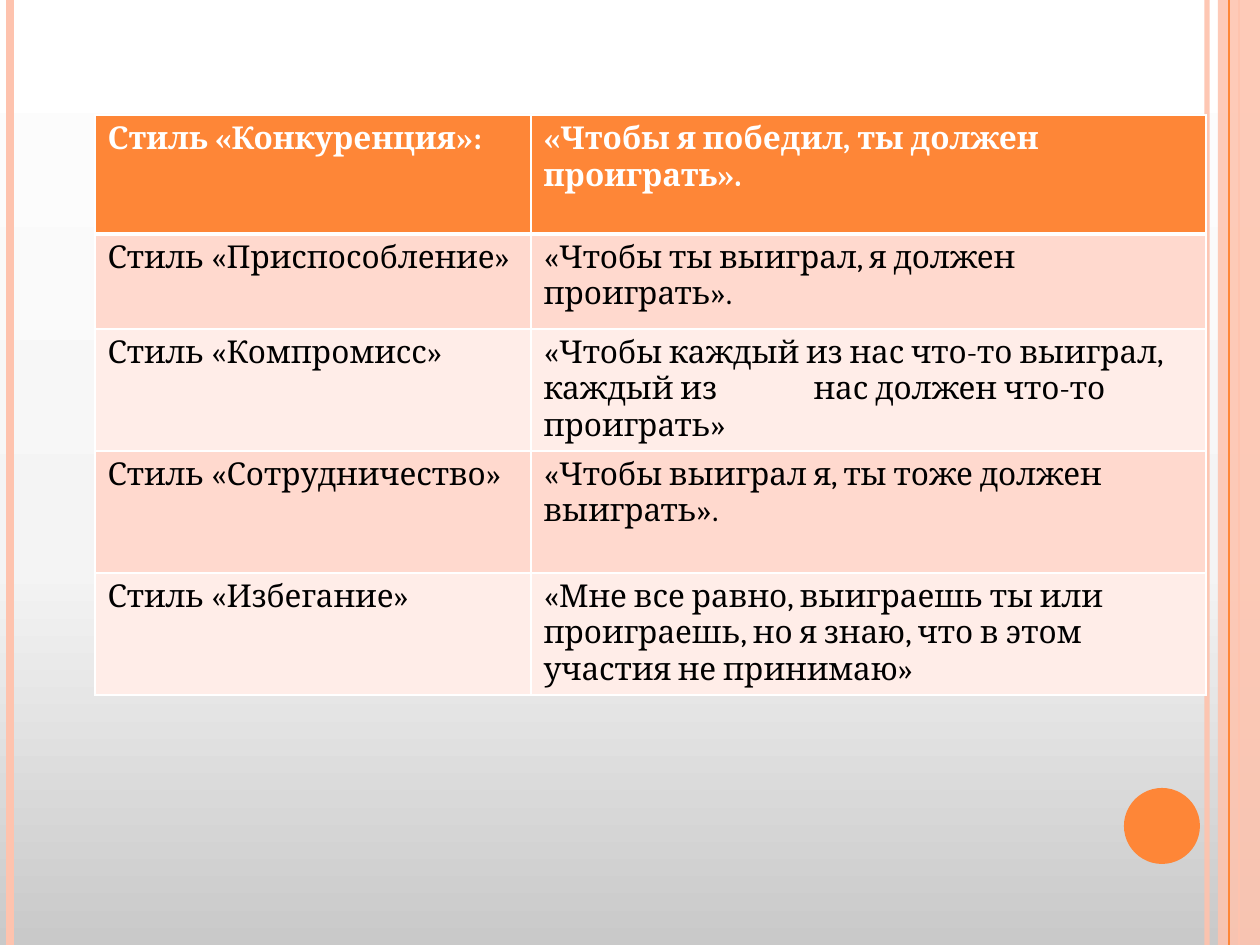
import copy

import pptx
import pptx.dml.color
import pptx.enum.shapes
import pptx.oxml
import pptx.oxml.ns
import pptx.util

PX = 914400 // 126
W, H = 1260, 945
FONT = "Cambria"
HUES = {
    "orange": "FE8637", "peach": "FEC3AE", "white": "FFFFFF", "black": "000000",
    "dark": "FFD9CE", "light": "FFEDE8", "grey": "C9C9C9", "pale": "F4F4F4",
}
NS = pptx.oxml.ns.nsdecls("a")
qn = pptx.oxml.ns.qn


def rgb(name):
    return pptx.dml.color.RGBColor.from_string(HUES[name])


def fade(props, share):
    """Set the opacity, in percent, of the first colour inside props."""
    hue = next(props.iter(qn("a:srgbClr")))
    hue.append(pptx.oxml.parse_xml(f'<a:alpha {NS} val="{share * 1000}"/>'))


deck = pptx.Presentation()
deck.slide_width, deck.slide_height = W * PX, H * PX
slide = deck.slides.add_slide(deck.slide_layouts[6])
shapes = slide.shapes

# Background gradient, from the bottom up
fill = slide.background.fill
fill.gradient()
fill.gradient_angle = 90
first = next(slide.background._cSld.iter(qn("a:gs")))
first.addnext(copy.deepcopy(first))
for stop, (place, hue) in zip(fill.gradient_stops,
                              [(0, "grey"), (0.4, "pale"), (1, "white")]):
    stop.position = place
    stop.color.rgb = rgb(hue)

# Side band, then the vertical stripes: x, colour, points, opacity
band = shapes.add_shape(pptx.enum.shapes.MSO_SHAPE.RECTANGLE,
                        1218 * PX, 0, 42 * PX, H * PX)
band.shadow.inherit = False
band.fill.solid()
band.fill.fore_color.rgb = rgb("peach")
fade(band._element.spPr, 87)
band.line.fill.background()

stripes = [(1207, "peach", 3, 93), (10, "peach", 4.5, 100),
           (1239, "peach", 1.5, 100), (1229, "orange", 0.75, 100)]
for x, hue, size, share in stripes:
    line = shapes.add_connector(pptx.enum.shapes.MSO_CONNECTOR.STRAIGHT,
                                x * PX, 0, x * PX, H * PX)
    line.line.color.rgb = rgb(hue)
    line.line.width = pptx.util.Pt(size)
    props = line._element.spPr
    if share < 100:
        fade(props, share)
    props.append(pptx.oxml.parse_xml(f"<a:effectLst {NS}/>"))

disc = shapes.add_shape(pptx.enum.shapes.MSO_SHAPE.OVAL,
                        1124 * PX, 788 * PX, 76 * PX, 76 * PX)
disc.shadow.inherit = False
disc.fill.solid()
disc.fill.fore_color.rgb = rgb("orange")
disc.line.fill.background()

# Table of conflict styles: height, style, motto
rows = [
    (119, "Стиль «Конкуренция»:", "«Чтобы я победил, ты должен проиграть»."),
    (95, "Стиль «Приспособление»", "«Чтобы ты выиграл, я должен проиграть»."),
    (122, "Стиль «Компромисс»",
     "«Чтобы каждый из нас что-то выиграл, каждый из\tнас должен что-то проиграть»"),
    (122, "Стиль «Сотрудничество»", "«Чтобы выиграл я, ты тоже должен выиграть»."),
    (122, "Стиль «Избегание»",
     "«Мне все равно, выиграешь ты или проиграешь, но я знаю, "
     "что в этом участия не принимаю»"),
]
cols = [436, 675]
tall = sum(row[0] for row in rows)
table = shapes.add_table(len(rows), len(cols), 95 * PX, 115 * PX,
                         sum(cols) * PX, tall * PX).table
for col, wide in zip(table.columns, cols):
    col.width = wide * PX

for i, (high, *texts) in enumerate(rows):
    table.rows[i].height = high * PX
    head = i == 0
    back = "orange" if head else ("dark" if i % 2 else "light")
    for j, text in enumerate(texts):
        cell = table.cell(i, j)
        cell.fill.solid()
        cell.fill.fore_color.rgb = rgb(back)
        props = cell._tc.get_or_add_tcPr()
        for k, side in enumerate("LRTB"):
            thick = (head and side == "B") or (i == 1 and side == "T")
            size = pptx.util.Pt(3 if thick else 1)
            props.insert(k, pptx.oxml.parse_xml(
                f'<a:ln{side} {NS} w="{size}"><a:solidFill>'
                f'<a:srgbClr val="{HUES["white"]}"/></a:solidFill></a:ln{side}>'))
        para = cell.text_frame.paragraphs[0]
        if "\t" in text:
            para._p.get_or_add_pPr().append(pptx.oxml.parse_xml(
                f'<a:tabLst {NS}><a:tab pos="{270 * PX}" algn="l"/></a:tabLst>'))
        run = para.add_run()
        run.text = text
        run.font.name = FONT
        run.font.size = pptx.util.Pt(18)
        run.font.bold = head
        run.font.color.rgb = rgb("white" if head else "black")

deck.save("out.pptx")
